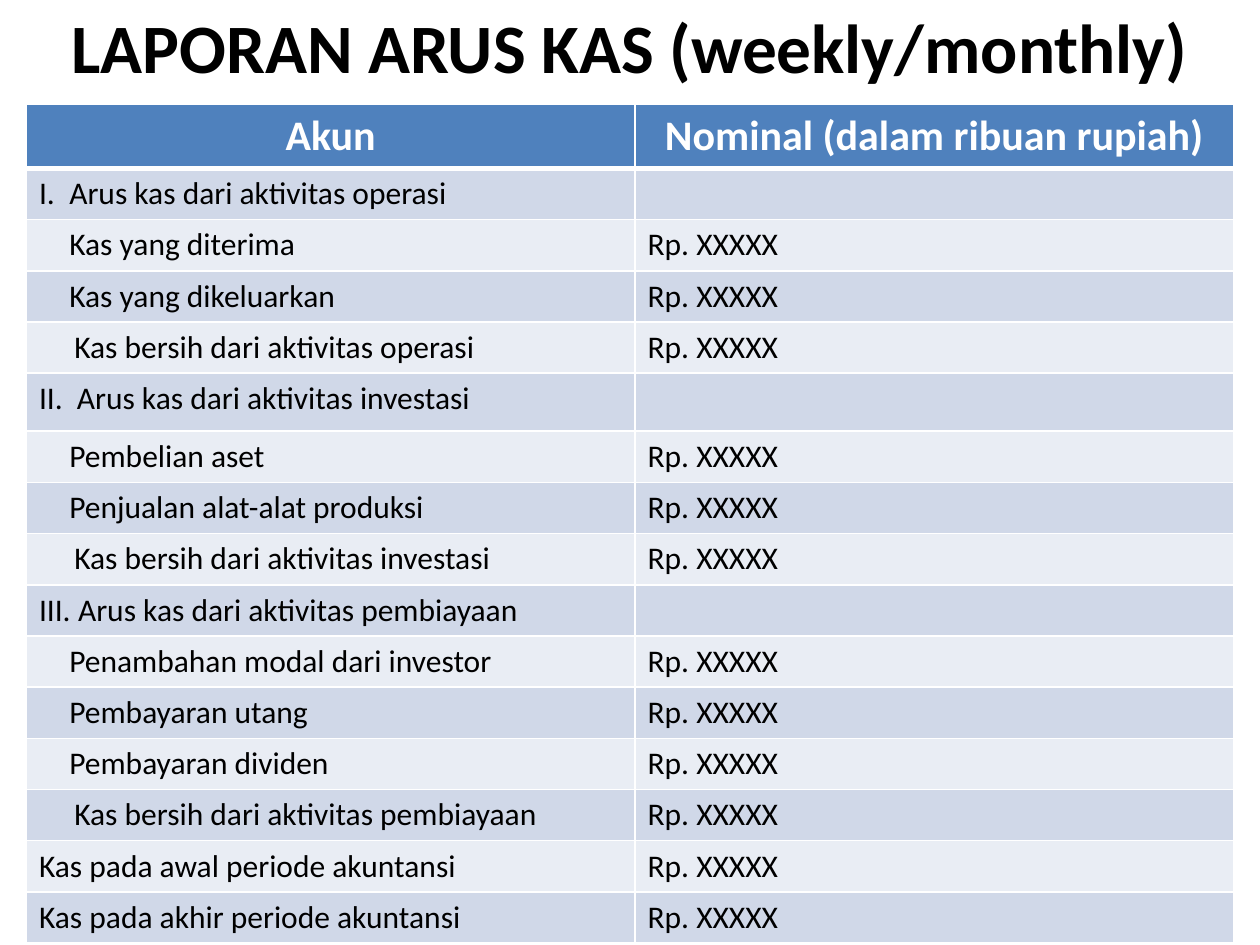
from pptx import Presentation
from pptx.dml.color import RGBColor
from pptx.enum.text import MSO_ANCHOR, PP_ALIGN
from pptx.oxml import parse_xml
from pptx.oxml.ns import nsdecls
from pptx.util import Inches, Pt

COLORS = {"text": "000000", "white": "FFFFFF", "header": "4F81BD",
          "band_dark": "D0D8E8", "band_light": "E9EDF4"}
FONT = "Calibri"
AMOUNT = "Rp. XXXXX"
HEADERS = ["Akun", "Nominal (dalam ribuan rupiah)"]
SECTION_ROW = 5
HEADER_H, TALL_H = 0.49, 0.46
ITEM, TOTAL = 0.24, 0.28

# label, left margin, hanging indent, amount
def section(number, name, hang, items):
    label = f"Arus kas dari aktivitas {name}"
    total = f"Kas bersih dari aktivitas {name}"
    return [(f"{number}\t{label}", hang, hang, ""),
            *[(item, ITEM, 0, AMOUNT) for item in items],
            (total, TOTAL, 0, AMOUNT)]


ROWS = [
    *section("I.", "operasi", 0.24, ["Kas yang diterima", "Kas yang dikeluarkan"]),
    *section("II.", "investasi", 0.3, ["Pembelian aset", "Penjualan alat-alat produksi"]),
    *section("III.", "pembiayaan", 0.31, ["Penambahan modal dari investor",
                                         "Pembayaran utang", "Pembayaran dividen"]),
    ("Kas pada awal periode akuntansi", 0, 0, AMOUNT),
    ("Kas pada akhir periode akuntansi", 0, 0, AMOUNT),
]


def format_paragraph(p, size, color, bold=False, align=PP_ALIGN.LEFT):
    p.alignment = align
    p.font.name = FONT
    p.font.size = Pt(size)
    p.font.bold = bold
    p.font.color.rgb = RGBColor.from_string(COLORS[color])


def set_borders(cell, top=1, bottom=1):
    tc_pr = cell._tc.get_or_add_tcPr()
    for side, width in (("L", 1), ("R", 1), ("T", top), ("B", bottom)):
        tc_pr.append(parse_xml(
            f'<a:ln{side} {nsdecls("a")} w="{Pt(width)}"><a:solidFill>'
            f'<a:srgbClr val="{COLORS["white"]}"/></a:solidFill></a:ln{side}>'))


def set_fill(cell, color):
    cell.fill.solid()
    cell.fill.fore_color.rgb = RGBColor.from_string(COLORS[color])


def set_indent(p, left, hang):
    p_pr = p._p.get_or_add_pPr()
    p_pr.set("marL", str(Inches(left)))
    p_pr.set("indent", str(-Inches(hang)))


def add_title(s, text, left, top, width, height):
    sp = s.shapes.title
    sp.left, sp.top, sp.width, sp.height = map(Inches, (left, top, width, height))
    tf = sp.text_frame
    tf.text = text
    tf.word_wrap = True
    tf.vertical_anchor = MSO_ANCHOR.MIDDLE
    format_paragraph(tf.paragraphs[0], 39.6, "text", True, PP_ALIGN.CENTER)


def add_cash_flow_table(s, left, top, width, height):
    frame = s.shapes.add_table(len(ROWS) + 1, 2, *map(Inches, (left, top, width, height)))
    table = frame.table
    table.columns[0].width = Inches(4.83)
    table.columns[1].width = Inches(width - 4.83)
    row_h = (height - HEADER_H - TALL_H) / (len(ROWS) - 1)
    for i, row in enumerate(table.rows):
        row.height = Inches({0: HEADER_H, SECTION_ROW: TALL_H}.get(i, row_h))

    for cell, text in zip(table.rows[0].cells, HEADERS):
        cell.text = text
        set_borders(cell, bottom=3)
        set_fill(cell, "header")
        format_paragraph(cell.text_frame.paragraphs[0], 24, "white", True, PP_ALIGN.CENTER)

    for i, (label, margin, hang, amount) in enumerate(ROWS, 1):
        cells = list(table.rows[i].cells)
        for cell, text in zip(cells, (label, amount)):
            cell.text = text
            set_borders(cell, top=3 if i == 1 else 1)
            set_fill(cell, "band_dark" if i % 2 else "band_light")
            format_paragraph(cell.text_frame.paragraphs[0], 18, "text")
        set_indent(cells[0].text_frame.paragraphs[0], margin, hang)


def main():
    prs = Presentation()
    prs.slide_width, prs.slide_height = Inches(10), Inches(7.5)
    s = prs.slides.add_slide(prs.slide_layouts[5])
    add_title(s, "LAPORAN ARUS KAS (weekly/monthly)", 0, 0.01, 10, 0.7)
    add_cash_flow_table(s, 0.21, 0.83, 9.58, 6.64)
    prs.save("out.pptx")


if __name__ == "__main__":
    main()
